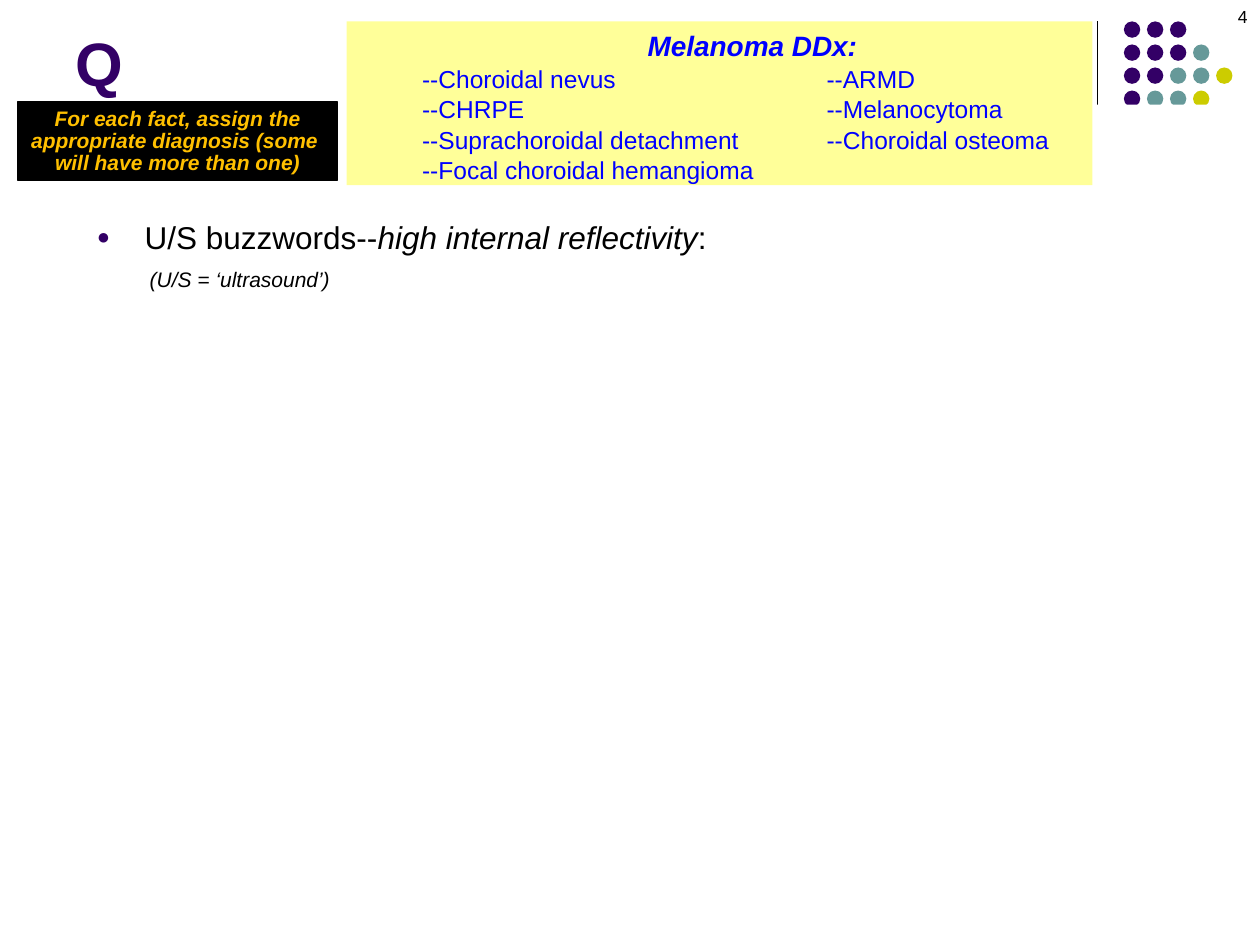
from lxml import etree
from pptx import Presentation
from pptx.dml.color import RGBColor
from pptx.enum.shapes import MSO_CONNECTOR, MSO_SHAPE
from pptx.enum.text import MSO_ANCHOR, PP_ALIGN
from pptx.oxml.ns import qn
from pptx.util import Inches, Pt

PURPLE, TEAL, LIME = "330066", "669999", "CCCC00"
BLACK, WHITE, BLUE, YELLOW, AMBER = "000000", "FFFFFF", "0000FF", "FFFF99", "FFC000"


def rgb(color):
    return RGBColor.from_string(color)


def write(paragraph, text, size=12, color=BLACK, bold=False, italic=False,
          align=PP_ALIGN.LEFT, spacing=None, font="Arial"):
    paragraph.alignment = align
    if spacing:
        paragraph.line_spacing = spacing
    run = paragraph.add_run()
    run.text = text
    run.font.name = font
    run.font.size = Pt(size)
    run.font.color.rgb = rgb(color)
    run.font.bold = bold
    run.font.italic = italic


def indent(paragraph, left, first=0):
    properties = paragraph._p.get_or_add_pPr()
    properties.set("marL", str(Inches(left)))
    properties.set("indent", str(Inches(first)))
    return properties


def add_tab(paragraph, position):
    tabs = etree.SubElement(paragraph._p.get_or_add_pPr(), qn("a:tabLst"))
    etree.SubElement(tabs, qn("a:tab"), pos=str(Inches(position)), algn="l")


def add_bullet(paragraph, left, char, color, percent):
    properties = indent(paragraph, left, -left)
    tint = etree.SubElement(properties, qn("a:buClr"))
    etree.SubElement(tint, qn("a:srgbClr"), val=color)
    etree.SubElement(properties, qn("a:buSzPct"), val=str(percent * 1000))
    etree.SubElement(properties, qn("a:buFont"), typeface="Arial")
    etree.SubElement(properties, qn("a:buChar"), char=char)


class SlideBuilder:
    def __init__(self, slide):
        self.slide = slide

    def line(self, x1, y1, x2, y2, color=BLACK, width=0.75):
        rule = self.slide.shapes.add_connector(
            MSO_CONNECTOR.STRAIGHT, Inches(x1), Inches(y1), Inches(x2), Inches(y2))
        rule.line.color.rgb = rgb(color)
        rule.line.width = Pt(width)
        etree.SubElement(rule._element.spPr, qn("a:effectLst"))

    def shape(self, kind, x, y, width, height, fill, outline=None):
        shape = self.slide.shapes.add_shape(
            kind, Inches(x), Inches(y), Inches(width), Inches(height))
        shape.shadow.inherit = False
        shape.fill.solid()
        shape.fill.fore_color.rgb = rgb(fill)
        if outline:
            shape.line.color.rgb = rgb(outline)
            shape.line.width = Pt(0.75)
        else:
            shape.line.fill.background()
        shape.text_frame.vertical_anchor = MSO_ANCHOR.TOP
        return shape.text_frame

    def text(self, x, y, width, height, anchor=MSO_ANCHOR.TOP, wrap=True):
        box = self.slide.shapes.add_textbox(
            Inches(x), Inches(y), Inches(width), Inches(height))
        box.text_frame.word_wrap = wrap
        box.text_frame.vertical_anchor = anchor
        return box.text_frame

    def dots(self, rows, x, y, pitch, size):
        for row, colors in enumerate(rows):
            for column, color in enumerate(colors):
                self.shape(MSO_SHAPE.OVAL, x + column * pitch, y + row * pitch,
                           size, size, color)


def main():
    presentation = Presentation()
    presentation.slide_width = Inches(10)
    presentation.slide_height = Inches(7.5)
    builder = SlideBuilder(presentation.slides.add_slide(presentation.slide_layouts[6]))

    builder.line(8.71, 0.17, 8.71, 1.83)
    dot_rows = [
        [PURPLE] * 3,
        [PURPLE] * 3 + [TEAL],
        [PURPLE] * 2 + [TEAL] * 2 + [LIME],
        [PURPLE] + [TEAL] * 2 + [LIME],
    ]
    builder.dots(dot_rows, 8.92, 0.17, 0.183, 0.13)
    builder.shape(MSO_SHAPE.RECTANGLE, 8.25, 0.83, 1.58, 1.17, WHITE)

    fact = builder.text(0.67, 1.68, 6.08, 1.33).paragraphs[0]
    add_bullet(fact, 0.38, "●", PURPLE, 70)
    write(fact, "U/S buzzwords--", size=18)
    write(fact, "high internal reflectivity", size=18, italic=True)
    write(fact, ":", size=18)

    differential = builder.shape(MSO_SHAPE.RECTANGLE, 2.75, 0.17, 5.92, 1.3, YELLOW)
    differential.margin_left = Inches(0.6)
    heading = differential.paragraphs[0]
    indent(heading, 1.79)
    write(heading, "Melanoma DDx:", size=16, color=BLUE, bold=True, italic=True, spacing=1.04)
    diagnoses = [
        "--Choroidal nevus\t--ARMD",
        "--CHRPE\t--Melanocytoma",
        "--Suprachoroidal detachment\t--Choroidal osteoma",
        "--Focal choroidal hemangioma",
    ]
    for diagnosis in diagnoses:
        entry = differential.add_paragraph()
        write(entry, diagnosis, size=14, color=BLUE, spacing=1.04)
        add_tab(entry, 3.21)

    instruction = builder.shape(
        MSO_SHAPE.RECTANGLE, 0.14, 0.81, 2.54, 0.62, BLACK, outline=BLACK)
    instruction.word_wrap = False
    instruction_lines = [
        "For each fact, assign the",
        "appropriate diagnosis (some ",
        "will have more than one)",
    ]
    for index, wording in enumerate(instruction_lines):
        paragraph = instruction.add_paragraph() if index else instruction.paragraphs[0]
        write(paragraph, wording, color=AMBER, bold=True, italic=True,
              align=PP_ALIGN.CENTER, spacing=0.88)

    page_number = builder.text(7.67, 0, 2.33, 0.5)
    write(page_number.paragraphs[0], "4", size=10, align=PP_ALIGN.RIGHT)

    title = builder.text(0.5, 0.13, 8.25, 0.7, anchor=MSO_ANCHOR.BOTTOM)
    write(title.paragraphs[0], "Q", size=35, color=PURPLE, bold=True)

    abbreviation = builder.text(1.09, 2.07, 1.64, 0.3, wrap=False)
    write(abbreviation.paragraphs[0], "(U/S = ‘ultrasound’)", italic=True)

    presentation.save("out.pptx")


if __name__ == "__main__":
    main()
